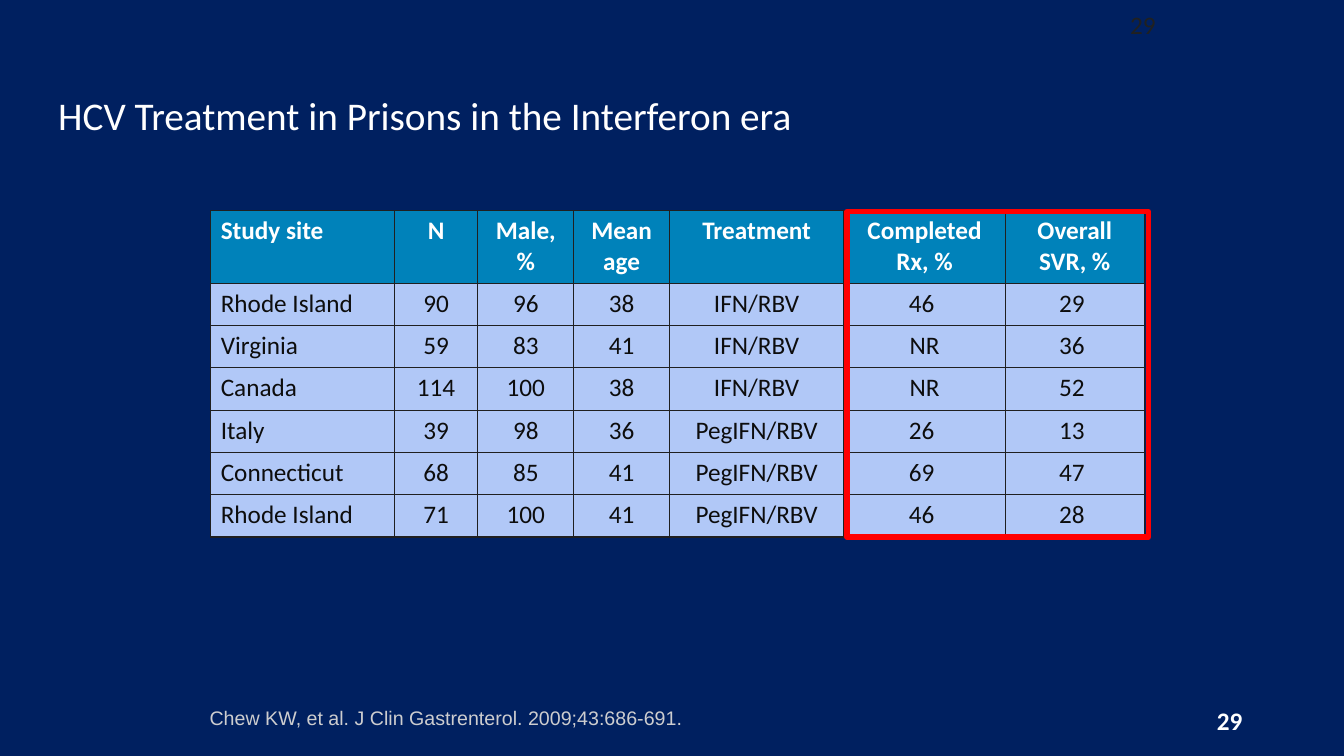
from lxml import etree
from pptx import Presentation
from pptx.dml.color import RGBColor
from pptx.enum import shapes, text
from pptx.oxml import ns
from pptx.util import Inches, Pt

HEADING = " HCV Treatment in Prisons in the Interferon era"
CITATION = "Chew KW, et al. J Clin Gastrenterol. 2009;43:686-691."
PAGE = "29"
STUDIES = [
    ("Study site", "N", "Male, %", "Mean age", "Treatment", "Completed Rx, %", "Overall SVR, %"),
    ("Rhode Island", "90", "96", "38", "IFN/RBV", "46 ", "29 "),
    ("Virginia", "59", "83", "41", "IFN/RBV", "NR", "36 "),
    ("Canada", "114", "100", "38", "IFN/RBV", "NR", "52 "),
    ("Italy", "39", "98", "36", "PegIFN/RBV", "26 ", "13 "),
    ("Connecticut", "68", "85", "41", "PegIFN/RBV", "69 ", "47 "),
    ("Rhode Island", "71", "100", "41", "PegIFN/RBV", "46 ", "28 "),
]
COLUMN_WIDTHS = (1.82, 0.83, 0.95, 0.95, 1.73, 1.6, 1.38)
ROW_HEIGHTS = (0.72,) + (0.42,) * (len(STUDIES) - 1)

NAVY = RGBColor(0x00, 0x20, 0x60)
WHITE = RGBColor(0xFF, 0xFF, 0xFF)
TEAL = RGBColor(0x00, 0x82, 0xBA)
PALE_BLUE = RGBColor(0xB1, 0xC8, 0xF7)
INK = RGBColor(0x0D, 0x0D, 0x0D)
CHARCOAL = RGBColor(0x20, 0x20, 0x20)
SILVER = RGBColor(0xCD, 0xCD, 0xCF)
RED = RGBColor(0xFF, 0x00, 0x00)
LEFT, CENTER, RIGHT = text.PP_ALIGN.LEFT, text.PP_ALIGN.CENTER, text.PP_ALIGN.RIGHT


def write(frame, words, size=18, color=WHITE, bold=False, font="Calibri", align=LEFT, wrap=True):
    frame.word_wrap = wrap
    paragraph = frame.paragraphs[0]
    paragraph.alignment = align
    run = paragraph.add_run()
    run.text = words
    run.font.name = font
    run.font.size = Pt(size)
    run.font.bold = bold
    run.font.color.rgb = color
    return paragraph


def add_borders(cell):
    properties = cell._tc.get_or_add_tcPr()
    for side in ("lnL", "lnR", "lnT", "lnB"):
        line = etree.SubElement(properties, ns.qn(f"a:{side}"), w=str(Pt(1)))
        fill = etree.SubElement(line, ns.qn("a:solidFill"))
        etree.SubElement(fill, ns.qn("a:srgbClr"), val=str(CHARCOAL))


def box(slide, *place):
    return slide.shapes.add_textbox(*map(Inches, place)).text_frame


def add_heading(slide):
    heading = slide.shapes.title
    heading.left, heading.top, heading.width, heading.height = map(Inches, (0.39, 0.53, 12.56, 0.9))
    heading.text_frame.auto_size = text.MSO_AUTO_SIZE.NONE
    heading.text_frame.vertical_anchor = text.MSO_ANCHOR.BOTTOM
    write(heading.text_frame, HEADING, size=28).line_spacing = 0.95


def add_studies(slide):
    place = map(Inches, (2.09, 2.09, sum(COLUMN_WIDTHS), sum(ROW_HEIGHTS)))
    studies = slide.shapes.add_table(len(STUDIES), len(COLUMN_WIDTHS), *place).table
    for column, width in zip(studies.columns, COLUMN_WIDTHS):
        column.width = Inches(width)
    for row, height in zip(studies.rows, ROW_HEIGHTS):
        row.height = Inches(height)
    for r, study in enumerate(STUDIES):
        header = r == 0
        for c, words in enumerate(study):
            cell = studies.cell(r, c)
            add_borders(cell)
            cell.fill.solid()
            cell.fill.fore_color.rgb = TEAL if header else PALE_BLUE
            write(cell.text_frame, words, color=WHITE if header else INK,
                  bold=header, align=CENTER if c else LEFT)


def add_outcome_frame(slide):
    outcomes = slide.shapes.add_shape(
        shapes.MSO_SHAPE.RECTANGLE, *map(Inches, (8.4, 2.1, 2.99, 3.23)))
    outcomes.shadow.inherit = False
    outcomes.fill.background()
    outcomes.line.color.rgb = RED
    outcomes.line.width = Pt(4)


def main():
    deck = Presentation()
    deck.slide_width, deck.slide_height = Inches(13.33), Inches(7.5)
    slide = deck.slides.add_slide(deck.slide_layouts.get_by_name("Title Only"))
    slide.background.fill.solid()
    slide.background.fill.fore_color.rgb = NAVY
    write(box(slide, 8.56, 0.04, 3, 0.4), PAGE, color=CHARCOAL, align=RIGHT)
    add_heading(slide)
    add_studies(slide)
    write(box(slide, 1.98, 6.95, 4.91, 0.34), CITATION, size=14, color=SILVER, font="Arial", wrap=False)
    add_outcome_frame(slide)
    write(box(slide, 9.42, 6.95, 3, 0.4), PAGE, bold=True, align=RIGHT)
    deck.save("out.pptx")


if __name__ == "__main__":
    main()
